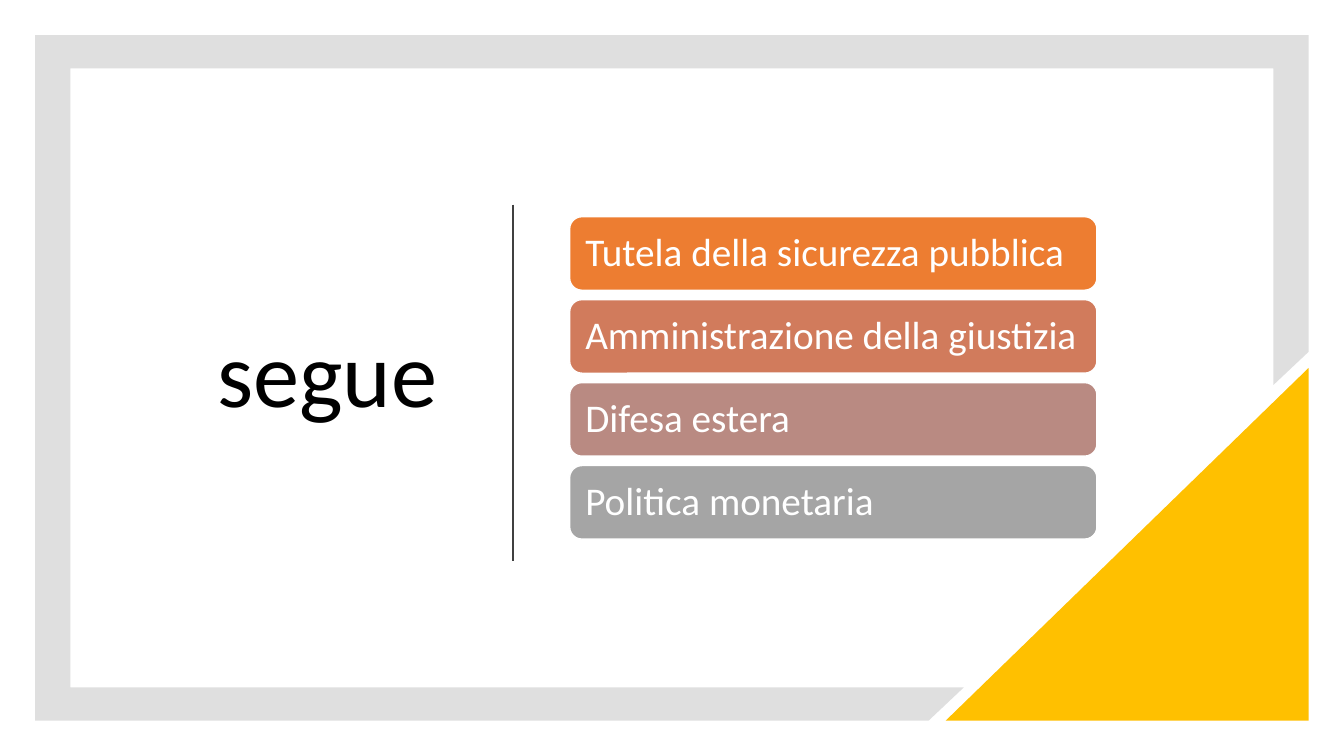
from lxml.etree import SubElement
from pptx import Presentation
from pptx.dml.color import RGBColor
from pptx.enum.shapes import MSO_CONNECTOR as Connector, MSO_SHAPE as Preset
from pptx.enum.text import MSO_ANCHOR as Anchor, MSO_AUTO_SIZE as AutoSize, PP_ALIGN as Align
from pptx.oxml.ns import qn
from pptx.util import Inches, Pt

# Content
TITLE = "segue"
TOPICS = [
    ("Tutela della sicurezza pubblica", "ED7D31"),
    ("Amministrazione della giustizia", "D17B5C"),
    ("Difesa estera", "B98A82"),
    ("Politica monetaria", "A5A5A5"),
]
FONT = "Calibri"

# Layout in inches
WIDTH, HEIGHT = 13.33, 7.5
MARGIN = 0.35
LEFT, TOP, RIGHT, BOTTOM = MARGIN, MARGIN, WIDTH - MARGIN, HEIGHT - MARGIN
BAND_X, BAND_Y = 0.35, 0.33
CORNER_W, CORNER_H = 3.6, 3.5
CUT_X, CUT_Y = 9.21, 3.49
TITLE_BOX = (1.1, 1.3, 3.34, 4.9)
DIVIDER_X, DIVIDER_TOP, DIVIDER_BOTTOM = 5.09, 2.03, 5.57
BAR_LEFT, BAR_TOP, BAR_W, BAR_H, BAR_STEP = 5.65, 2.15, 5.23, 0.73, 0.823


def color(hex_code):
    return RGBColor.from_string(hex_code)


def paint(shape, fill, line=None):
    shape.shadow.inherit = False
    shape.fill.solid()
    shape.fill.fore_color.rgb = color(fill)
    if line:
        shape.line.color.rgb = color(line)
        shape.line.width = Pt(1)
    else:
        shape.line.fill.background()


def write(shape, text, size, hex_code, align, inset):
    frame = shape.text_frame
    frame.text = text
    frame.word_wrap = True
    frame.auto_size = AutoSize.NONE
    frame.vertical_anchor = Anchor.MIDDLE
    frame.margin_left = frame.margin_right = Inches(inset)
    paragraph = frame.paragraphs[0]
    paragraph.alignment = align
    paragraph.line_spacing = 0.9
    paragraph.font.name = FONT
    paragraph.font.size = Pt(size)
    paragraph.font.color.rgb = color(hex_code)


prs = Presentation()
prs.slide_width, prs.slide_height = Inches(WIDTH), Inches(HEIGHT)
slide = prs.slides.add_slide(prs.slide_layouts[5])
shapes = slide.shapes

# Grey frame, cut off along the corner diagonal
outline = [
    (LEFT, TOP), (RIGHT, TOP), (RIGHT, CUT_Y),
    (RIGHT - BAND_X, CUT_Y + BAND_Y), (RIGHT - BAND_X, TOP + BAND_Y),
    (LEFT + BAND_X, TOP + BAND_Y), (LEFT + BAND_X, BOTTOM - BAND_Y),
    (CUT_X + BAND_X, BOTTOM - BAND_Y), (CUT_X, BOTTOM), (LEFT, BOTTOM),
]
points = [(Inches(x), Inches(y)) for x, y in outline]
builder = shapes.build_freeform(*points[0])
builder.add_line_segments(points[1:], close=True)
border = builder.convert_to_shape()
paint(border, "808080")
border_color = border._element.spPr.find(f"{qn('a:solidFill')}/{qn('a:srgbClr')}")
SubElement(border_color, qn("a:alpha"), val="25000")

# Yellow corner
corner = shapes.add_shape(
    Preset.RIGHT_TRIANGLE, Inches(RIGHT - CORNER_W), Inches(BOTTOM - CORNER_H),
    Inches(CORNER_W), Inches(CORNER_H))
corner._element.spPr.get_or_add_xfrm().set("flipH", "1")
paint(corner, "FFC000")

# Title
title = shapes.title
title.left, title.top, title.width, title.height = map(Inches, TITLE_BOX)
write(title, TITLE, 66, "000000", Align.RIGHT, 0.1)

# Divider
divider = shapes.add_connector(
    Connector.STRAIGHT, Inches(DIVIDER_X), Inches(DIVIDER_TOP),
    Inches(DIVIDER_X), Inches(DIVIDER_BOTTOM))
divider.line.color.rgb = color("404040")
divider.line.width = Pt(1.5)
SubElement(divider._element.spPr, qn("a:effectLst"))

# Topic bars
for row, (topic, fill) in enumerate(TOPICS):
    bar = shapes.add_shape(
        Preset.ROUNDED_RECTANGLE, Inches(BAR_LEFT), Inches(BAR_TOP + row * BAR_STEP),
        Inches(BAR_W), Inches(BAR_H))
    paint(bar, fill, "FFFFFF")
    write(bar, topic, 28, "FFFFFF", Align.LEFT, 0.12)

prs.save("out.pptx")
